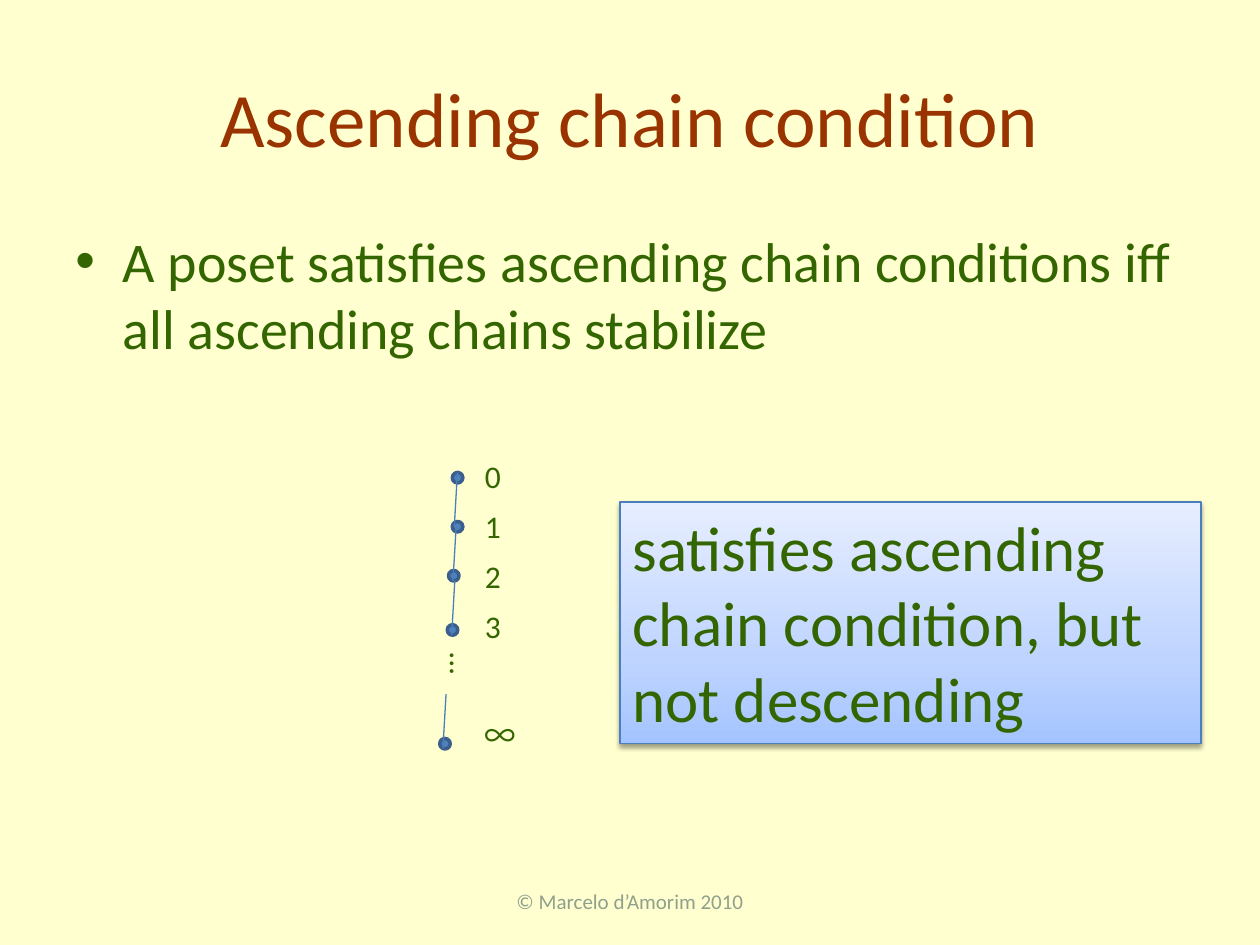
from lxml import etree
from pptx import Presentation
from pptx.dml.color import RGBColor
from pptx.enum.shapes import MSO_CONNECTOR, MSO_SHAPE
from pptx.enum.text import MSO_ANCHOR, MSO_AUTO_SIZE, PP_ALIGN
from pptx.oxml import parse_xml
from pptx.oxml.ns import nsdecls, qn
from pptx.util import Pt

LINE, ELLIPSE, RECT = MSO_CONNECTOR.STRAIGHT, MSO_SHAPE.OVAL, MSO_SHAPE.RECTANGLE
TOP, MIDDLE = MSO_ANCHOR.TOP, MSO_ANCHOR.MIDDLE
LEFT, CENTER = PP_ALIGN.LEFT, PP_ALIGN.CENTER
GROW = MSO_AUTO_SIZE.SHAPE_TO_FIT_TEXT

CREAM = RGBColor(0xFF, 0xFF, 0xD0)
BROWN = RGBColor(0x99, 0x33, 0x00)
GREEN = RGBColor(0x33, 0x66, 0x00)
GRAY = RGBColor(0x90, 0xA0, 0x8C)
BLUE = RGBColor(0x4F, 0x81, 0xBD)
DOT_EDGE = RGBColor(0x3A, 0x5F, 0x8C)
LINE_BLUE = RGBColor(0x4B, 0x7E, 0xBC)
SHADOW = RGBColor(0x00, 0x00, 0x00)
CALLOUT_STOPS = [(0, RGBColor(0xA4, 0xC4, 0xFF)),
                 (35, RGBColor(0xBF, 0xD4, 0xFF)),
                 (100, RGBColor(0xE6, 0xEE, 0xFF))]

FONT, SYMBOL_FONT = "Calibri", "Noto Sans CJK KR"
DOT_SIZE = 6
DOTS = [(258.5, 270), (258.5, 298), (256.3, 326), (255.6, 357), (251.3, 422)]
LINK_DX, LINK_DY = -1.8, 31
LABEL_LEFT, LABEL_TOP, LABEL_STEP = 270, 257.8, 28.6


def box(x, y, w, h):
    return Pt(x), Pt(y), Pt(w), Pt(h)


def write(tf, text, size, color, font=FONT, align=LEFT, anchor=TOP, wrap=True):
    tf.word_wrap = wrap
    tf.vertical_anchor = anchor
    p = tf.paragraphs[0]
    p.alignment = align
    r = p.add_run()
    r.text = text
    r.font.size = Pt(size)
    r.font.name = font
    r.font.color.rgb = color
    if font != FONT:
        ea = etree.SubElement(r.font._element, qn("a:ea"))
        ea.set("typeface", font)
    return p


def add_text(s, place, text, size, color, **style):
    sp = s.shapes.add_textbox(*box(*place))
    return write(sp.text_frame, text, size, color, **style)


def add_bullet(s, place, text):
    p = add_text(s, place, text, 32, GREEN)
    p.space_before = Pt(6.4)
    pPr = p._p.get_or_add_pPr()
    pPr.set("marL", str(Pt(27)))
    pPr.set("indent", str(Pt(-27)))
    pPr.append(parse_xml(f'<a:buFont {nsdecls("a")} typeface="Arial"/>'))
    pPr.append(parse_xml(f'<a:buChar {nsdecls("a")} char="•"/>'))


def add_label(s, place, text, font=FONT, rotation=0):
    sp = s.shapes.add_textbox(*box(*place))
    sp.rotation = rotation
    write(sp.text_frame, text, 18, GREEN, font=font, wrap=False)
    sp.text_frame.auto_size = GROW


def add_dot(s, x, y):
    sp = s.shapes.add_shape(ELLIPSE, *box(x, y, DOT_SIZE, DOT_SIZE))
    sp.shadow.inherit = False
    sp.fill.solid()
    sp.fill.fore_color.rgb = BLUE
    sp.line.color.rgb = DOT_EDGE
    sp.line.width = Pt(2)


def add_link(s, x, y):
    ln = s.shapes.add_connector(LINE, Pt(x), Pt(y), Pt(x + LINK_DX), Pt(y + LINK_DY))
    ln.line.color.rgb = LINE_BLUE
    ln.line.width = Pt(0.75)
    etree.SubElement(ln._element.spPr, qn("a:effectLst"))


def add_callout(s, place, text):
    sp = s.shapes.add_shape(RECT, *box(*place))
    sp.line.color.rgb = LINE_BLUE
    sp.line.width = Pt(0.75)
    stops = "".join(f'<a:gs pos="{pos * 1000}"><a:srgbClr val="{color}"/></a:gs>'
                    for pos, color in CALLOUT_STOPS)
    spPr = sp._element.spPr
    spPr.find(qn("a:prstGeom")).addnext(parse_xml(
        f'<a:gradFill {nsdecls("a")}><a:gsLst>{stops}</a:gsLst>'
        '<a:lin ang="16200000" scaled="0"/></a:gradFill>'))
    spPr.append(parse_xml(
        f'<a:effectLst {nsdecls("a")}><a:outerShdw blurRad="{Pt(3.1)}" '
        f'dist="{Pt(1.6)}" dir="5400000" rotWithShape="0"><a:srgbClr val="{SHADOW}">'
        '<a:alpha val="38000"/></a:srgbClr></a:outerShdw></a:effectLst>'))
    write(sp.text_frame, text, 36, GREEN)
    sp.text_frame.auto_size = GROW


def add_chain(s):
    for x, y in DOTS:
        add_dot(s, x, y)
    for i in range(3):
        add_link(s, 261.4 - 0.75 * i, 270 + LINK_DY * i)
    add_link(s, 254.9, 396.7)
    for i in range(4):
        add_label(s, (LABEL_LEFT, LABEL_TOP + LABEL_STEP * i, 24, 29), str(i))
    add_label(s, (LABEL_LEFT, 405.4, 31, 29), "∞", font=SYMBOL_FONT)
    add_label(s, (238.3, 364.3, 27.4, 29), "…", rotation=270)


def main():
    """Build the slide on the ascending chain condition."""
    prs = Presentation()
    prs.slide_width, prs.slide_height = Pt(720), Pt(540)
    s = prs.slides.add_slide(prs.slide_layouts[6])
    s.background.fill.solid()
    s.background.fill.fore_color.rgb = CREAM
    add_text(s, (36, 21.6, 648, 90), "Ascending chain condition", 44, BROWN,
             align=CENTER, anchor=MIDDLE)
    add_bullet(s, (36, 126, 648, 356.4),
               "A poset satisfies ascending chain conditions iff all ascending chains stabilize")
    add_text(s, (246, 500.5, 228, 28.8), "© Marcelo d’Amorim 2010", 12, GRAY,
             align=CENTER, anchor=MIDDLE)
    add_chain(s)
    add_callout(s, (354.3, 286.8, 332, 138),
                "satisfies ascending chain condition, but not descending")
    prs.save("out.pptx")


if __name__ == "__main__":
    main()
